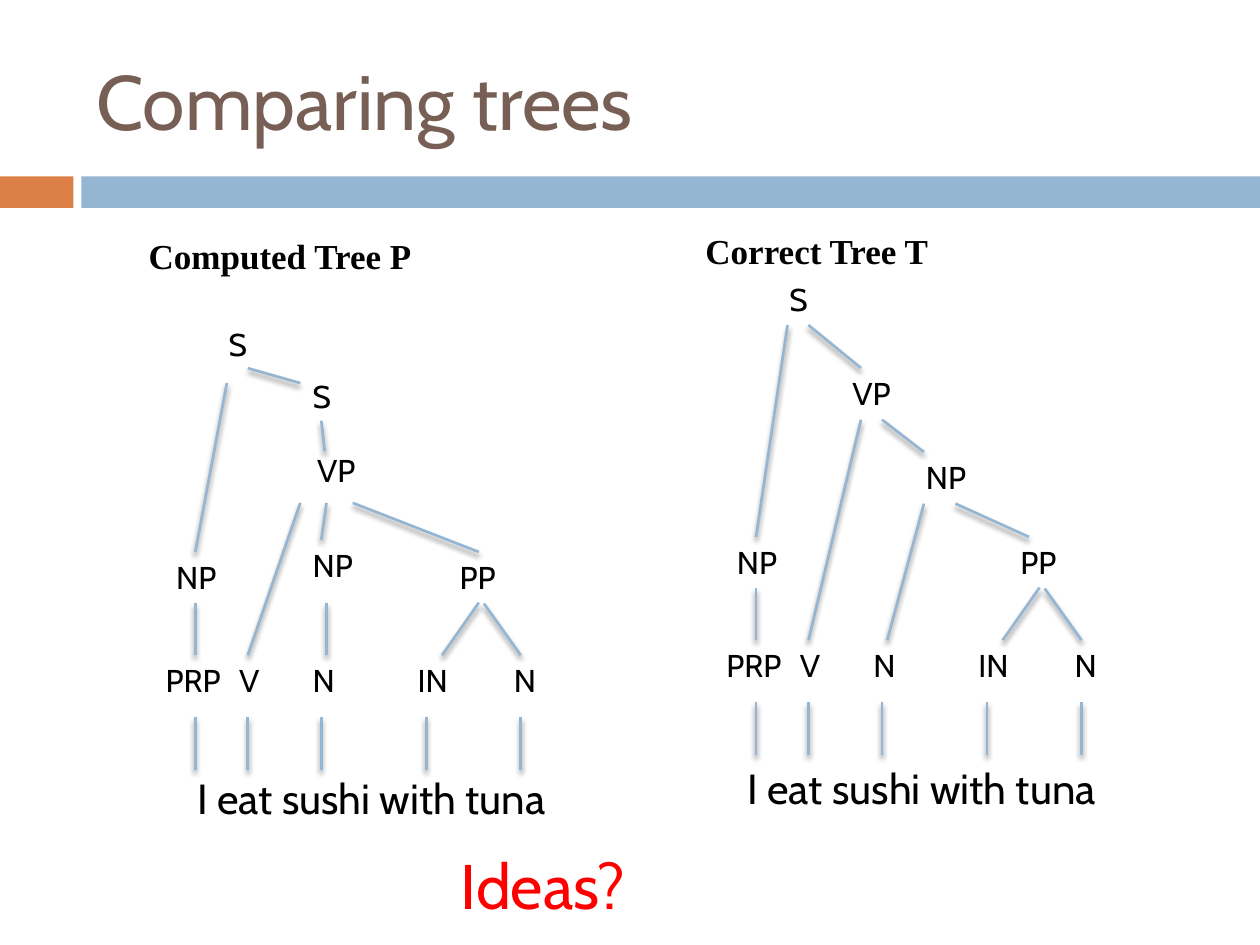
from lxml.etree import SubElement
from pptx import Presentation
from pptx.dml.color import RGBColor
from pptx.enum.shapes import MSO_CONNECTOR as Connector, MSO_SHAPE as Shape
from pptx.enum.text import MSO_ANCHOR as Anchor, PP_ALIGN as Align
from pptx.oxml.ns import qn
from pptx.util import Pt

COLORS = {"orange": "DD8047", "blue": "94B6D2", "brown": "775F55",
          "black": "000000", "red": "FF0000"}


def add_label(text, left, top, width, height, size=18, color="black",
              font="Cabin", bold=False, wrap=True):
    box = slide.shapes.add_textbox(Pt(left), Pt(top), Pt(width), Pt(height))
    box.text_frame.word_wrap = wrap
    box.text_frame.text = text
    span = box.text_frame.paragraphs[0].runs[0]
    span.font.name = font
    span.font.size = Pt(size)
    span.font.bold = bold
    span.font.color.rgb = RGBColor.from_string(COLORS[color])


def add_branch(x1, y1, x2, y2):
    branch = slide.shapes.add_connector(Connector.STRAIGHT, Pt(x1), Pt(y1), Pt(x2), Pt(y2))
    branch.line.width = Pt(1.5)
    branch.line.color.rgb = RGBColor.from_string(COLORS["blue"])
    # Soft shadow straight below the line
    effects = SubElement(branch.line._get_or_add_ln().getparent(), qn("a:effectLst"))
    shadow = SubElement(effects, qn("a:outerShdw"), blurRad=str(Pt(3)), dist=str(Pt(2.4)),
                        dir="5400000", rotWithShape="0")
    tint = SubElement(shadow, qn("a:srgbClr"), val=COLORS["black"])
    SubElement(tint, qn("a:alpha"), val="45000")


deck = Presentation()
deck.slide_width, deck.slide_height = Pt(720), Pt(540)
slide = deck.slides.add_slide(deck.slide_layouts[5])

# Header bars
for left, width, color in [(0, 42, "orange"), (46.5, 673.5, "blue")]:
    bar = slide.shapes.add_shape(Shape.RECTANGLE, Pt(left), Pt(100.8), Pt(width), Pt(18))
    bar.shadow.inherit = False
    bar.fill.solid()
    bar.fill.fore_color.rgb = RGBColor.from_string(COLORS[color])
    bar.line.fill.background()

# Title
title = slide.shapes.title
title.left, title.top, title.width, title.height = Pt(48), Pt(18), Pt(642), Pt(78)
title.text_frame.text = "Comparing trees"
title.text_frame.vertical_anchor = Anchor.MIDDLE
para = title.text_frame.paragraphs[0]
para.alignment = Align.LEFT
para.runs[0].font.name = "Cabin"
para.runs[0].font.size = Pt(44)
para.runs[0].font.color.rgb = RGBColor.from_string(COLORS["brown"])

# Headings and question
for text, left, top, width in [("Correct Tree T", 396, 127.4, 142.6),
                               ("Computed Tree P", 77.8, 130.3, 165.6)]:
    add_label(text, left, top, width, 31.7, 20, font="Times New Roman", bold=True, wrap=False)
add_label("Ideas?", 256.3, 480.2, 136, 51, 36, "red")

# Parts shared by both trees, relative to the top of the PRP branch
shared_nodes = [("PRP", -24, 0, 66), ("V", 18, 0, 78), ("N", 60, 0, 30), ("IN", 120, 0, 42),
                ("N", 175, 0, 42), ("NP", -18, -59, 78), ("PP", 144, -59, 54)]
shared_branches = [(x, 35.5, x, 65.5) for x in (0, 30, 72, 132, 186)]
shared_branches += [(0, -30, 0, 0), (141, 0, 162, -30), (186, 0, 165, -29.5)]

# Each tree: origin, sentence offset, upper nodes, upper branches
trees = [
    ((111.6, 374.4), (-6, 63.4),
     [("NP", 60, -66, 48), ("VP", 62.5, -120, 48), ("S", 60, -162.5, 48), ("S", 12, -192, 48)],
     [(75, 0, 75, -30), (30, 0, 60, -87), (72, -66, 75, -87), (162, -59, 90, -87),
      (74, -116.5, 72, -134), (0, -59, 18, -155.5), (60, -155.5, 30, -164)]),
    ((432, 365.8), (-12, 66.2),
     [("NP", 90, -107.5, 48), ("VP", 48, -155.5, 48), ("S", 12, -209.5, 48)],
     [(75, 0, 96, -78), (156, -59, 114, -78), (30, 0, 60, -126),
      (96, -107.5, 72, -126), (0, -59, 18, -180), (60, -155.5, 30, -180)]),
]
for (x, y), (dx, dy), nodes, branches in trees:
    add_label("I eat sushi with tuna", x + dx, y + dy, 294, 36, 24)
    for text, left, top, width in shared_nodes + nodes:
        add_label(text, x + left, y + top, width, 29)
    for x1, y1, x2, y2 in shared_branches + branches:
        add_branch(x + x1, y + y1, x + x2, y + y2)

deck.save("out.pptx")
